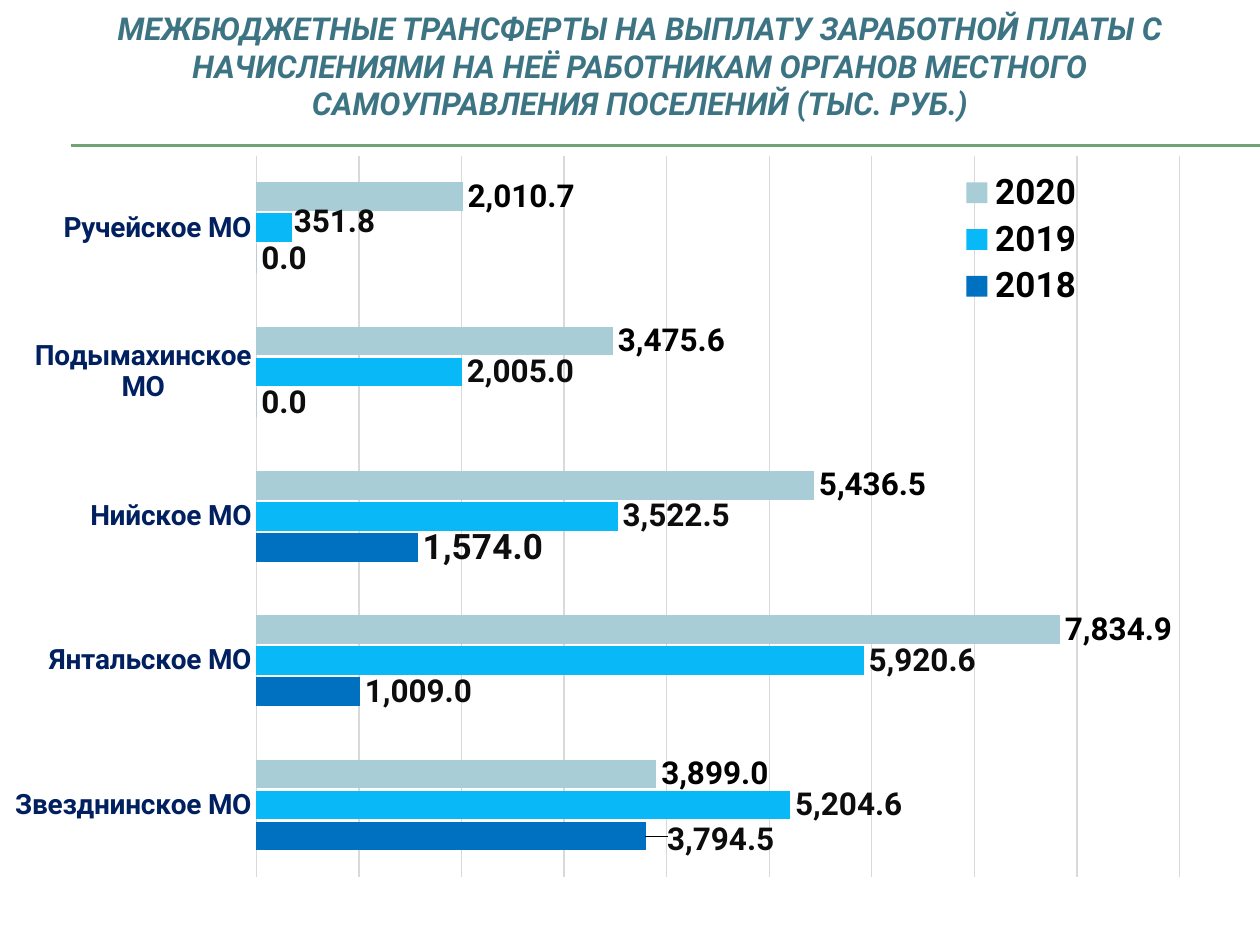
from dataclasses import dataclass

from lxml.etree import SubElement
from pptx import Presentation
from pptx.chart.data import CategoryChartData
from pptx.dml.color import RGBColor
from pptx.enum.chart import XL_CHART_TYPE as ChartType
from pptx.enum.chart import XL_LABEL_POSITION as LabelPosition
from pptx.enum.chart import XL_LEGEND_POSITION as LegendPosition
from pptx.enum.chart import XL_TICK_LABEL_POSITION as TickLabels
from pptx.enum.chart import XL_TICK_MARK as TickMark
from pptx.enum.shapes import MSO_CONNECTOR as Connector
from pptx.enum.text import MSO_ANCHOR as Anchor
from pptx.enum.text import PP_ALIGN as Align
from pptx.oxml import parse_xml
from pptx.oxml.ns import nsdecls, qn
from pptx.util import Inches, Pt


@dataclass(frozen=True)
class Theme:
    font: str = "Roboto"
    title: str = "3C7483"
    rule: str = "72A376"
    grid: str = "D9D9D9"
    category: str = "002060"
    black: str = "000000"
    label: str = "0D0D0D"
    title_size: int = 18
    category_size: int = 16
    label_size: int = 18
    legend_size: int = 20
    base_size: int = 10


THEME = Theme()
NUMBER_FORMAT = "#,##0.0"

TITLE = (
    "МЕЖБЮДЖЕТНЫЕ ТРАНСФЕРТЫ НА ВЫПЛАТУ ЗАРАБОТНОЙ ПЛАТЫ С "
    "НАЧИСЛЕНИЯМИ НА НЕЁ РАБОТНИКАМ ОРГАНОВ МЕСТНОГО "
    "САМОУПРАВЛЕНИЯ ПОСЕЛЕНИЙ (ТЫС. РУБ.)"
)
SETTLEMENTS = ["Звезднинское МО", "Янтальское МО", "Нийское МО",
               "Подымахинское МО", "Ручейское МО"]
# year, bar colour, label colour, values
YEARS = [
    ("2018", "0070C0", THEME.label, [3794.5, 1009, 1574, 0, 0]),
    ("2019", "09B9F7", THEME.label, [5204.6, 5920.6, 3522.5, 2005, 351.8]),
    ("2020", "A8CDD7", THEME.black, [3899, 7834.9, 5436.5, 3475.6, 2010.7]),
]
# (year, settlement index): label size, shift as fractions of the chart
SPECIAL_LABELS = {
    ("2018", 0): (THEME.label_size, 0.014, 0.005),
    ("2018", 2): (THEME.legend_size, 0, 0),
    ("2019", 4): (THEME.label_size, -0.003, -0.008),
}


def style_font(font, size, color, bold=True, italic=False):
    font.name = THEME.font
    font.size = Pt(size)
    font.bold = bold
    font.italic = italic
    font.color.rgb = RGBColor.from_string(color)


def style_line(line, color):
    line.color.rgb = RGBColor.from_string(color)
    line.width = Pt(0.75)


def make_layout(**settings):
    """Manual chart layout; settings are given in schema order."""
    items = "".join(f'<c:{name} val="{value}"/>' for name, value in settings.items())
    return parse_xml(
        f'<c:layout {nsdecls("c")}><c:manualLayout>{items}</c:manualLayout></c:layout>'
    )


def replace_layout(parent, layout, position):
    for old in parent.findall(qn("c:layout")):
        parent.remove(old)
    parent.insert(position, layout)


def add_title(page, left, top, width, height):
    box = page.shapes.add_textbox(left, top, width, height)
    frame = box.text_frame
    frame.word_wrap = True
    frame.vertical_anchor = Anchor.MIDDLE
    para = frame.paragraphs[0]
    para.text = TITLE
    para.alignment = Align.CENTER
    style_font(para.font, THEME.title_size, THEME.title, italic=True)


def add_rule(page, left, top, right):
    for y in (top, top + Inches(0.01)):
        rule = page.shapes.add_connector(Connector.STRAIGHT, left, y, right, y)
        style_line(rule.line, THEME.rule)
        SubElement(rule._element.spPr, qn("a:effectLst"))


def style_axes(chart):
    category_axis = chart.category_axis
    category_axis.has_major_gridlines = False
    category_axis.major_tick_mark = TickMark.NONE
    category_axis.tick_label_position = TickLabels.NEXT_TO_AXIS
    style_font(category_axis.tick_labels.font, THEME.category_size, THEME.category)
    style_line(category_axis.format.line, THEME.grid)

    value_axis = chart.value_axis
    value_axis.visible = False
    value_axis.minimum_scale, value_axis.maximum_scale = 0, 9000
    value_axis.major_unit = 1000
    value_axis.has_major_gridlines = True
    style_line(value_axis.major_gridlines.format.line, THEME.grid)
    value_axis.tick_labels.number_format = NUMBER_FORMAT
    value_axis.tick_labels.number_format_is_linked = False


def style_series(series, color, label_color):
    series.format.fill.solid()
    series.format.fill.fore_color.rgb = RGBColor.from_string(color)
    series.invert_if_negative = False
    labels = series.data_labels
    labels.show_value = True
    labels.position = LabelPosition.OUTSIDE_END
    labels.number_format = NUMBER_FORMAT
    labels.number_format_is_linked = False
    style_font(labels.font, THEME.label_size, label_color)

    for (year, index), (size, dx, dy) in SPECIAL_LABELS.items():
        if year != series.name:
            continue
        label = series.points[index].data_label
        style_font(label.font, size, label_color)
        label.position = LabelPosition.OUTSIDE_END
        if dx or dy:
            element = labels._element.findall(qn("c:dLbl"))[-1]
            replace_layout(element, make_layout(x=dx, y=dy), 1)


def add_transfer_chart(page, left, top, width, height):
    data = CategoryChartData(number_format=NUMBER_FORMAT)
    data.categories = SETTLEMENTS
    for year, _, _, values in YEARS:
        data.add_series(year, values)
    chart = page.shapes.add_chart(
        ChartType.BAR_CLUSTERED, left, top, width, height, data
    ).chart
    chart.has_title = False
    style_font(chart.font, THEME.base_size, THEME.black, bold=False)
    style_axes(chart)

    # Bars and their labels
    plot = chart.plots[0]
    plot.gap_width, plot.overlap = 187, -8
    plot.vary_by_categories = False
    for series, (_, color, label_color, _) in zip(plot.series, YEARS):
        style_series(series, color, label_color)
    plot_area = chart._chartSpace.chart.plotArea
    replace_layout(plot_area, make_layout(
        layoutTarget="inner", xMode="edge", yMode="edge",
        x=0.202, y=0, w=0.776, h=0.946), 0)

    # Legend over the upper right of the plot
    chart.has_legend = True
    legend = chart.legend
    legend.position = LegendPosition.RIGHT
    legend.include_in_layout = False
    style_font(legend.font, THEME.legend_size, THEME.black)
    replace_layout(legend._element, make_layout(
        xMode="edge", yMode="edge", x=0.78, y=0.015, w=0.13, h=0.19), 1)


def main():
    deck = Presentation()
    deck.slide_width, deck.slide_height = Inches(10), Inches(7.5)
    page = deck.slides.add_slide(deck.slide_layouts[6])
    add_rule(page, Inches(0.56), Inches(1.15), deck.slide_width)
    add_title(page, Inches(0.33), Inches(0.05), Inches(9.5), Inches(0.94))
    add_transfer_chart(page, Inches(0.12), Inches(1.23), Inches(9.45), Inches(6.06))
    deck.save("out.pptx")


if __name__ == "__main__":
    main()
